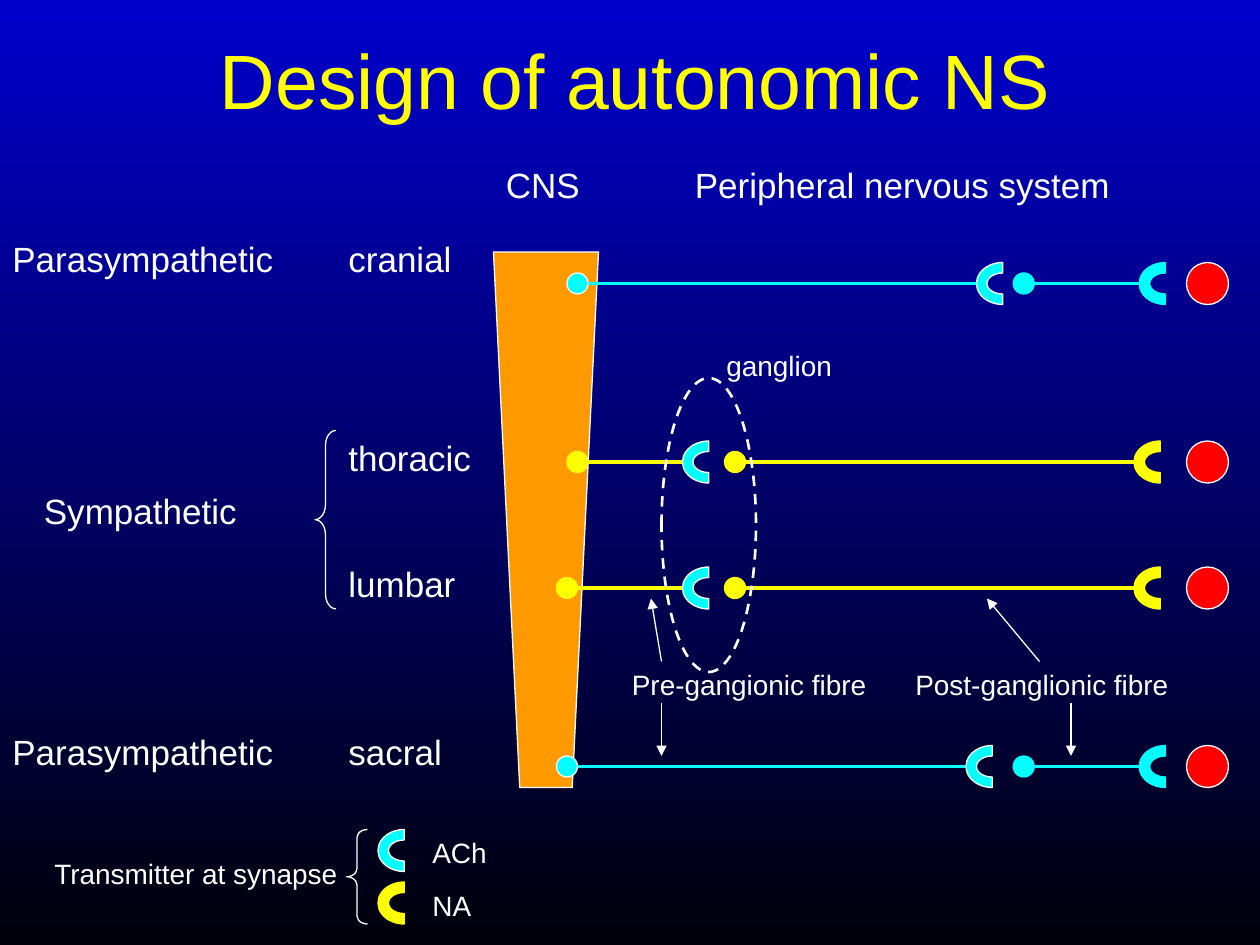
import dataclasses

import pptx
import pptx.dml.color
import pptx.enum.dml
import pptx.enum.shapes
import pptx.enum.text
import pptx.oxml
import pptx.oxml.ns
import pptx.util

RGBColor = pptx.dml.color.RGBColor
Shape = pptx.enum.shapes.MSO_SHAPE

WHITE = RGBColor(0xFF, 0xFF, 0xFF)
YELLOW = RGBColor(0xFF, 0xFF, 0x00)
CYAN = RGBColor(0x00, 0xFF, 0xFF)
RED = RGBColor(0xFF, 0x00, 0x00)
ORANGE = RGBColor(0xFF, 0x99, 0x00)
SKY_TOP = RGBColor(0x00, 0x00, 0xCC)
SKY_BOTTOM = RGBColor(0x00, 0x00, 0x0A)

FONT = "Arial"
LABEL, SMALL = 20, 16
UNIT = 2.54 / 12  # grid step in cm: the slide is 120 by 90 steps


def grid(steps):
    return pptx.util.Cm(steps * UNIT)


@dataclasses.dataclass
class Box:
    """An area in grid steps."""
    left: float
    top: float
    width: float
    height: float

    def inner(self, left, top, width, height):
        return Box(self.left + left, self.top + top, width, height)

    def lengths(self):
        return [grid(n) for n in (self.left, self.top, self.width, self.height)]


def write(para, text, size, colour):
    span = para.add_run()
    span.text = text
    span.font.name = FONT
    span.font.size = pptx.util.Pt(size)
    span.font.color.rgb = colour


def add_text(page, box, text, size=LABEL, wrap=True):
    frame = page.shapes.add_textbox(*box.lengths()).text_frame
    frame.word_wrap = wrap
    write(frame.paragraphs[0], text, size, WHITE)


def paint(shape, fill, outline=WHITE, width=0.75):
    shape.shadow.inherit = False
    if fill is None:
        shape.fill.background()
    else:
        shape.fill.solid()
        shape.fill.fore_color.rgb = fill
    shape.line.color.rgb = outline
    shape.line.width = pptx.util.Pt(width)


def add_preset(page, kind, box, fill=None, outline=WHITE, width=0.75):
    shape = page.shapes.add_shape(kind, *box.lengths())
    paint(shape, fill, outline, width)
    return shape


def add_brace(page, box, curve):
    brace = add_preset(page, Shape.LEFT_BRACE, box)
    brace.adjustments[0] = curve


def add_synapse(page, tip, middle, fill, outline):
    """A half ring, open to the right, with its left edge at tip."""
    arc = add_preset(page, Shape.BLOCK_ARC, Box(tip + 0.5, middle - 2.5, 4, 5), fill, outline)
    arc.rotation = 270


def add_line(page, start, end, colour, width, arrow=False):
    line = page.shapes.add_connector(
        pptx.enum.shapes.MSO_CONNECTOR.STRAIGHT, *[grid(n) for n in start + end])
    line.line.color.rgb = colour
    line.line.width = pptx.util.Pt(width)
    properties = line.element.spPr
    if arrow:
        stroke = properties.find(pptx.oxml.ns.qn("a:ln"))
        stroke.append(pptx.oxml.parse_xml(
            '<a:tailEnd %s type="triangle"/>' % pptx.oxml.ns.nsdecls("a")))
    properties.append(pptx.oxml.parse_xml("<a:effectLst %s/>" % pptx.oxml.ns.nsdecls("a")))


def add_background(page):
    fill = page.background.fill
    fill.gradient()
    fill.gradient_angle = 270
    for stop, colour, place in zip(fill.gradient_stops, (SKY_TOP, SKY_BOTTOM), (0, 1)):
        stop.color.rgb = colour
        stop.position = place


def add_title(page, box):
    title = page.shapes.title
    title.left, title.top, title.width, title.height = box.lengths()
    title.text_frame.vertical_anchor = pptx.enum.text.MSO_ANCHOR.MIDDLE
    para = title.text_frame.paragraphs[0]
    para.alignment = pptx.enum.text.PP_ALIGN.CENTER
    write(para, "Design of autonomic NS", 44, YELLOW)


def add_headings(page, box):
    add_text(page, box.inner(0, 0, 12, 5.2), "CNS")
    add_text(page, box.inner(18, 0, 52, 5.2), "Peripheral nervous system")


def add_divisions(page, box):
    for top, text in ((0, "Parasympathetic"), (47, "Parasympathetic")):
        add_text(page, box.inner(0, top, 29, 5.2), text)
    add_text(page, box.inner(3, 24, 25, 5.2), "Sympathetic")
    add_brace(page, box.inner(30, 19, 2, 17), 0.71)
    for top, text in ((0, "cranial"), (19, "thoracic"), (31, "lumbar"), (47, "sacral")):
        add_text(page, box.inner(32, top, 18, 5.2), text)


def add_cord(page, box):
    """The tapering central nervous system."""
    right, bottom = box.left + box.width, box.top + box.height
    corners = [(box.left, box.top), (box.left + 2.5, bottom),
               (right - 2.5, bottom), (right, box.top)]
    points = [(grid(x), grid(y)) for x, y in corners]
    builder = page.shapes.build_freeform(*points[0], scale=1.0)
    builder.add_line_segments(points[1:], close=True)
    paint(builder.convert_to_shape(), ORANGE)


def add_pathway(page, box, first_synapse, second_cell, last_synapse, colour, cell_outline):
    """Two neurons in a row and their target; the offsets count from the box."""
    middle = box.top + box.height / 2
    neurons = ((0, first_synapse, cell_outline, CYAN, WHITE),
               (second_cell, last_synapse, colour, colour, colour))
    for cell, synapse, outline, transmitter, synapse_outline in neurons:
        start, tip = box.left + cell, box.left + synapse
        add_line(page, (start + 2, middle), (tip, middle), colour, 2.25)
        add_preset(page, Shape.OVAL, box.inner(cell, 1, 2, 2), colour, outline)
        add_synapse(page, tip, middle, transmitter, synapse_outline)
    add_preset(page, Shape.OVAL, box.inner(box.width - 4, 0, 4, 4), RED)


def add_ganglion(page, box):
    ring = add_preset(page, Shape.OVAL, box, width=1.5)
    ring.line.dash_style = pptx.enum.dml.MSO_LINE.DASH
    add_text(page, box.inner(5, -3.4, 17, 4.4), "ganglion", SMALL)


def add_fibre_notes(page, box):
    add_text(page, box.inner(0, 6, 34, 4.4), "Pre-gangionic fibre", SMALL)
    add_text(page, box.inner(27, 6, 28, 4.4), "Post-ganglionic fibre", SMALL)
    arrows = (((4, 6), (3, 0)), ((4, 10), (4, 15)),
              ((40, 6), (35, 0)), ((43, 10), (43, 15)))
    for ends in arrows:
        start, end = [(box.left + x, box.top + y) for x, y in ends]
        add_line(page, start, end, WHITE, 0.75, arrow=True)


def add_legend(page, box):
    add_text(page, box.inner(0, 2, 30, 4.4), "Transmitter at synapse", SMALL)
    add_brace(page, box.inner(29, 0, 2, 9), 0.38)
    entries = (("ACh", CYAN, WHITE), ("NA", YELLOW, YELLOW))
    for row, (text, fill, outline) in enumerate(entries):
        add_synapse(page, box.left + 32, box.top + 2 + 5 * row, fill, outline)
        add_text(page, box.inner(36, 5 * row, 10, 4.4), text, SMALL)


def main():
    deck = pptx.Presentation()
    deck.slide_width, deck.slide_height = pptx.util.Cm(25.4), pptx.util.Cm(19.05)
    page = deck.slides.add_slide(deck.slide_layouts[5])
    add_background(page)
    add_title(page, Box(3, 3, 115, 9))
    add_headings(page, Box(47, 15, 70, 5.2))
    add_divisions(page, Box(0, 22, 50, 52.2))
    add_cord(page, Box(47, 24, 10, 51))

    # Cranial, thoracic, lumbar and sacral outflow
    add_pathway(page, Box(54, 25, 63, 4), 39, 42.5, 54.5, CYAN, WHITE)
    add_pathway(page, Box(54, 42, 63, 4), 11, 15, 54, YELLOW, YELLOW)
    add_pathway(page, Box(53, 54, 64, 4), 12, 16, 55, YELLOW, YELLOW)
    add_pathway(page, Box(53, 71, 64, 4), 39, 43.5, 55.5, CYAN, WHITE)

    add_ganglion(page, Box(63, 36, 9, 28))
    add_fibre_notes(page, Box(59, 57, 55, 15))
    add_legend(page, Box(4, 79, 46, 9))
    deck.save("out.pptx")


if __name__ == "__main__":
    main()
